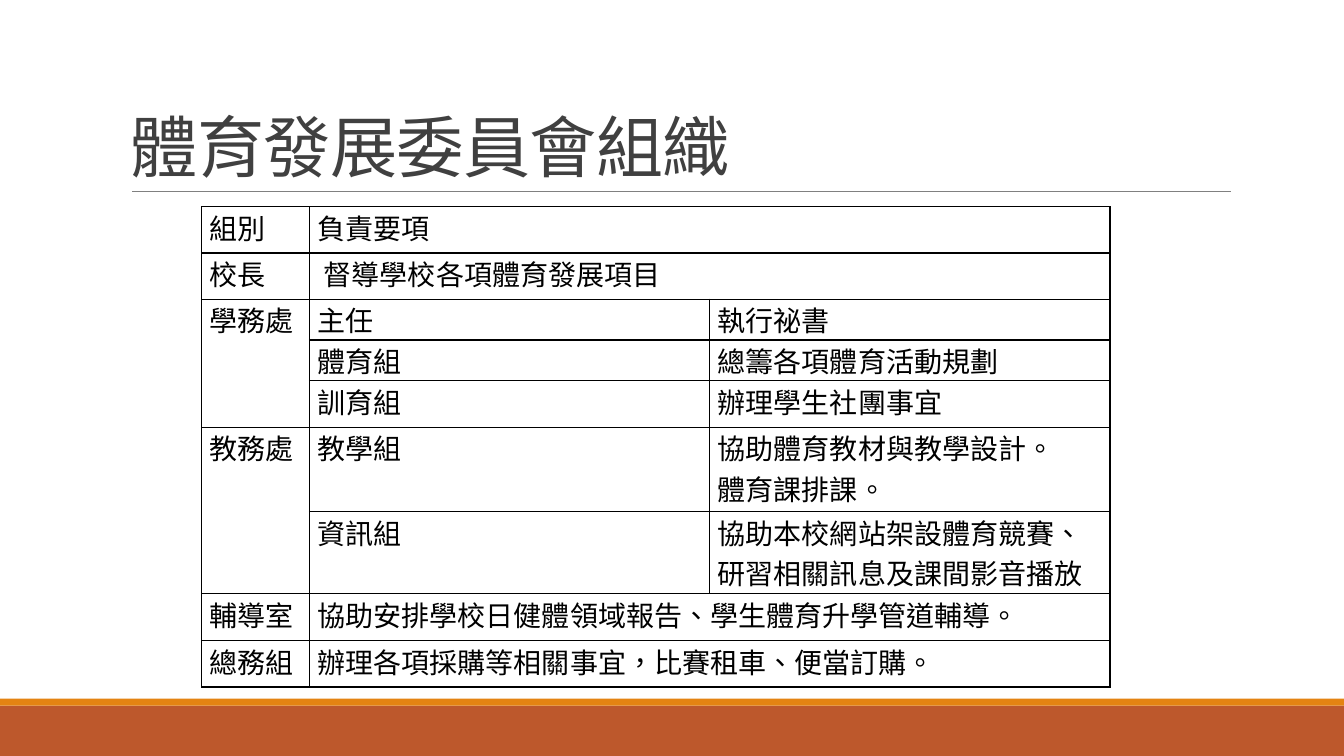
from typing import NamedTuple

from lxml.etree import SubElement
from pptx import Presentation
from pptx.dml.color import RGBColor
from pptx.enum.shapes import MSO_CONNECTOR as Link, MSO_SHAPE as Shape
from pptx.enum.text import MSO_ANCHOR as Anchor
from pptx.oxml import parse_xml
from pptx.oxml.ns import qn
from pptx.util import Inches, Pt

WIDE, HIGH = 13.33, 7.5
FONT = "Calibri"
INK = "000000"
NS = "http://schemas.openxmlformats.org/drawingml/2006/main"


class Band(NamedTuple):
    top: float
    tall: float
    fill: str


class Row(NamedTuple):
    tall: float
    cells: tuple[str, ...]  # two cells: the last spans; empty: joins the cell above


# Heights and positions are percentages of the slide
BANDS = [Band(93.33, 6.67, "BD582C"), Band(92.4, 0.93, "E48312")]
COLS = [8.03, 29.78, 29.78]
ROWS = [
    Row(6.13, ("組別", "負責要項")),
    Row(6.13, ("校長", " 督導學校各項體育發展項目")),
    Row(5.4, ("學務處", "主任", "執行祕書")),
    Row(5.4, ("", "體育組", "總籌各項體育活動規劃")),
    Row(6.13, ("", "訓育組", "辦理學生社團事宜")),
    Row(11.2, ("教務處", "教學組", "協助體育教材與教學設計。\n體育課排課。")),
    Row(10.85, ("", "資訊組", "協助本校網站架設體育競賽、研習相關訊息及課間影音播放")),
    Row(6.2, ("輔導室", "協助安排學校日健體領域報告、學生體育升學管道輔導。")),
    Row(6.13, ("總務組", "辦理各項採購等相關事宜，比賽租車、便當訂購。")),
]


def across(share: float) -> int:
    return Inches(WIDE * share / 100)


def down(share: float) -> int:
    return Inches(HIGH * share / 100)


def color(code: str) -> RGBColor:
    return RGBColor.from_string(code)


def write(frame, text: str, *, size: float, ink: str = INK,
          lead: float = 1.0, space: int = 0) -> None:
    frame.word_wrap = True
    for i, line in enumerate(text.split("\n")):
        para = frame.add_paragraph() if i else frame.paragraphs[0]
        para.line_spacing = lead
        run = para.add_run()
        run.text = line
        run.font.name = FONT
        run.font.size = Pt(size)
        run.font.color.rgb = color(ink)
        props = run._r.get_or_add_rPr()
        props.set("lang", "zh-TW")
        if space:
            props.set("spc", str(space))


def draw_band(slide, band: Band) -> None:
    bar = slide.shapes.add_shape(
        Shape.RECTANGLE, 0, down(band.top), across(100), down(band.tall))
    bar.shadow.inherit = False
    bar.fill.solid()
    bar.fill.fore_color.rgb = color(band.fill)
    bar.line.fill.background()


def draw_title(slide, text: str) -> None:
    box = slide.shapes.add_textbox(across(9), down(4.13), across(82.5), down(21.2))
    box.text_frame.vertical_anchor = Anchor.BOTTOM
    write(box.text_frame, text, size=48, ink="404040", lead=0.85, space=-50)
    rule = slide.shapes.add_connector(
        Link.STRAIGHT, across(9.83), down(25.33), across(91.6), down(25.33))
    rule.line.color.rgb = color("808080")
    rule.line.width = Pt(0.5)
    SubElement(rule._element.spPr, qn("a:effectLst"))


def edge(cell) -> None:
    props = cell._tc.get_or_add_tcPr()
    for i, side in enumerate("LRTB"):
        props.insert(i, parse_xml(
            f'<a:ln{side} xmlns:a="{NS}" w="{Pt(1)}"><a:solidFill>'
            f'<a:srgbClr val="{INK}"/></a:solidFill></a:ln{side}>'))


def draw_table(slide, rows: list[Row]) -> None:
    table = slide.shapes.add_table(
        len(rows), len(COLS), across(15), down(27.33), across(sum(COLS)),
        down(sum(row.tall for row in rows))).table
    table.first_row = table.horz_banding = False
    for col, wide in zip(table.columns, COLS):
        col.width = across(wide)
    for cell in table.iter_cells():
        cell.fill.background()
        cell.margin_left = cell.margin_right = Inches(0.08)
        cell.margin_top = cell.margin_bottom = 0
        edge(cell)

    head = 0
    for r, row in enumerate(rows):
        table.rows[r].height = down(row.tall)
        for c, text in enumerate(row.cells):
            if text:
                write(table.cell(r, c).text_frame, text, size=20)
        if len(row.cells) < len(COLS):
            table.cell(r, 1).merge(table.cell(r, 2))
        # Join each group with the empty cells below it
        if row.cells[0]:
            head = r
        last = r + 1 == len(rows) or rows[r + 1].cells[0]
        if last and r > head:
            table.cell(head, 0).merge(table.cell(r, 0))


def main() -> None:
    deck = Presentation()
    deck.slide_width, deck.slide_height = across(100), down(100)
    slide = deck.slides.add_slide(deck.slide_layouts[6])
    slide.background.fill.solid()
    slide.background.fill.fore_color.rgb = color("FFFFFF")
    for band in BANDS:
        draw_band(slide, band)
    draw_title(slide, "體育發展委員會組織")
    draw_table(slide, ROWS)
    deck.save("out.pptx")


if __name__ == "__main__":
    main()
